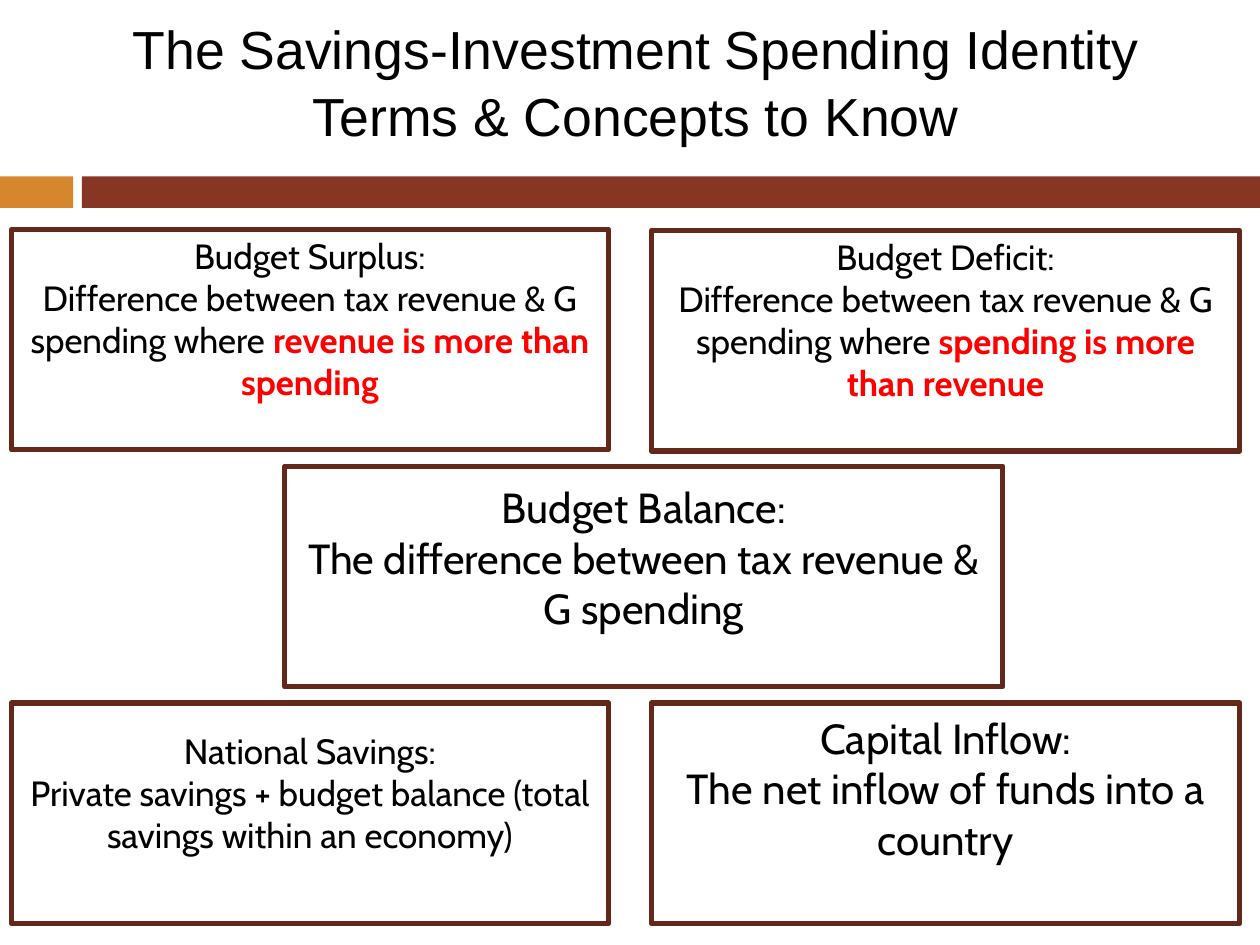
from pptx import Presentation
from pptx.dml.color import RGBColor
from pptx.enum.shapes import MSO_SHAPE as SHAPE
from pptx.enum.text import MSO_ANCHOR as ANCHOR, PP_ALIGN as ALIGN
from pptx.util import Inches, Pt

COLORS = {"text": "000000", "accent": "FF0000", "border": "64281B",
          "orange": "D6862D", "brown": "873624"}

# Left and width of each column, top of each row, in inches
LEFT, CENTER, RIGHT = (0.09, 4.74), (2.26, 5.7), (5.17, 4.67)
TOP, MIDDLE, BOTTOM = 1.82, 3.7, 5.58
CARD_HEIGHT = 1.75

BUDGET_GAP = "Difference between tax revenue & G spending where "
# column, top, text size, size of the free line below, term, definition, emphasis
CARDS = [
    (LEFT, TOP, 20, 20, "Budget Surplus:", BUDGET_GAP,
     "revenue is more than spending"),
    (CENTER, MIDDLE, 24, 18, "Budget Balance:",
     "The difference between tax revenue & G spending", ""),
    (LEFT, BOTTOM, 20, 20, "National Savings:",
     "Private savings + budget balance (total savings within an economy)", ""),
    (RIGHT, TOP + 0.01, 20, 20, "Budget Deficit:", BUDGET_GAP,
     "spending is more than revenue"),
    (RIGHT, BOTTOM, 24, 24, "Capital Inflow:",
     "The net inflow of funds into a country", ""),
]


def rgb(name):
    return RGBColor.from_string(COLORS[name])


def format_run(r, color="text", **values):
    for key, value in values.items():
        setattr(r.font, key, value)
    r.font.color.rgb = rgb(color)


def add_rect(slide, box):
    sp = slide.shapes.add_shape(SHAPE.RECTANGLE, *map(Inches, box))
    sp.shadow.inherit = False
    return sp


def add_title(slide, box):
    tf = slide.shapes.add_textbox(*map(Inches, box)).text_frame
    tf.word_wrap = True
    tf.vertical_anchor = ANCHOR.MIDDLE
    p = tf.paragraphs[0]
    p.text = "The Savings-Investment Spending Identity\vTerms & Concepts to Know"
    p.alignment = ALIGN.CENTER
    p.line_spacing = 1.04
    for r in p.runs:
        format_run(r, name="Arial", size=Pt(30.6))


def add_band(slide, left, top, width, height):
    """Two-colour divider: a short block, a gap and a long bar."""
    block, gap = 0.58, 0.07
    bar = block + gap
    for x, w, color in ((left, block, "orange"),
                        (left + bar, width - bar, "brown")):
        sp = add_rect(slide, (x, top, w, height))
        sp.fill.solid()
        sp.fill.fore_color.rgb = rgb(color)
        sp.line.fill.background()


def add_card(slide, box, size, free_size, term, definition, emphasis):
    sp = add_rect(slide, box)
    sp.fill.background()
    sp.line.color.rgb = rgb("border")
    sp.line.width = Pt(3)
    tf = sp.text_frame
    tf.word_wrap = True
    tf.vertical_anchor = ANCHOR.MIDDLE
    # Keep one line free below the text; a line is 1.2 times its text size
    tf.margin_bottom = Inches(0.05) + Pt(1.2 * free_size)
    font = {"name": "Cabin", "size": Pt(size)}
    for p, text in ((tf.paragraphs[0], term), (tf.add_paragraph(), definition)):
        p.alignment = ALIGN.CENTER
        r = p.add_run()
        r.text = text
        format_run(r, **font)
    if emphasis:
        r = p.add_run()
        r.text = emphasis
        format_run(r, "accent", bold=True, **font)


def main():
    prs = Presentation()
    prs.slide_width, prs.slide_height = Inches(10), Inches(7.5)
    slide = prs.slides.add_slide(prs.slide_layouts[6])
    add_band(slide, 0, 1.4, 10, 0.25)
    add_title(slide, (0.09, 0.02, 9.91, 1.23))
    for (left, width), top, *content in CARDS:
        add_card(slide, (left, top, width, CARD_HEIGHT), *content)
    prs.save("out.pptx")


if __name__ == "__main__":
    main()
